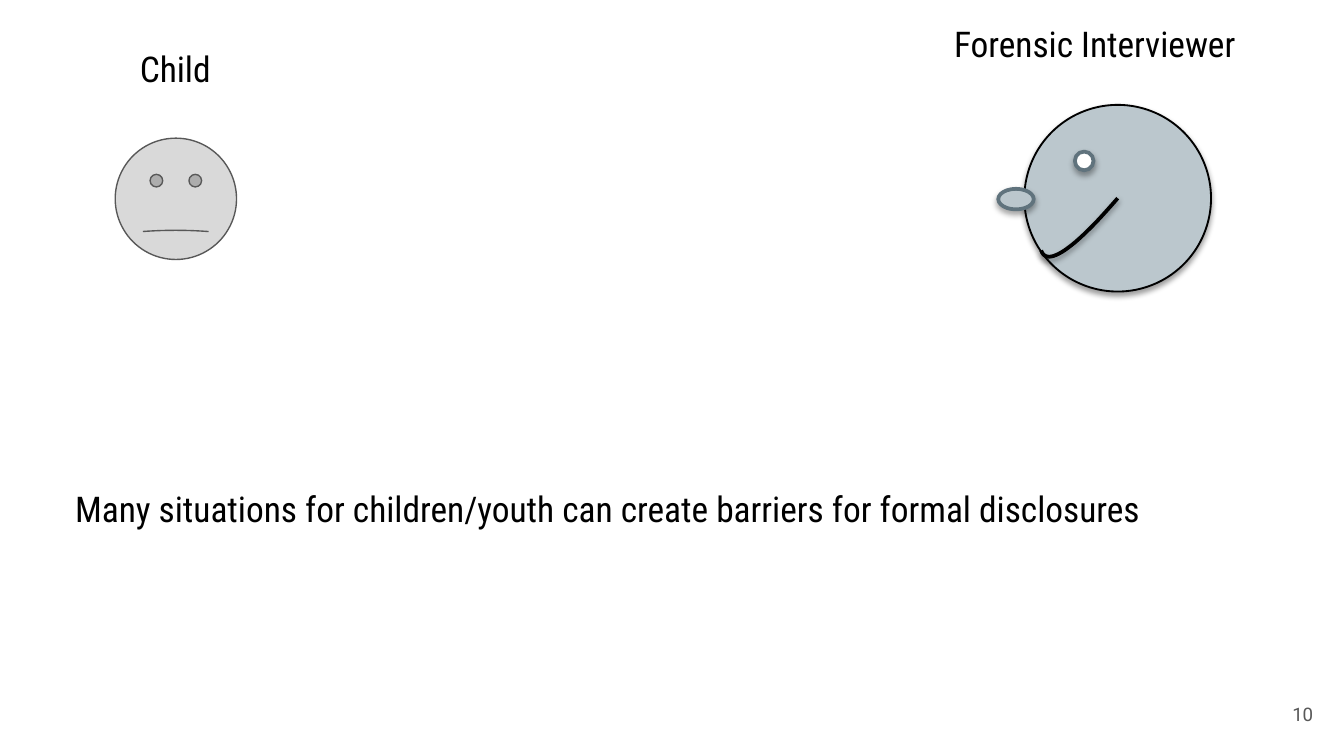
from pptx import Presentation, util as u
from pptx.dml.color import RGBColor
from pptx.enum import shapes, text
from pptx.oxml import ns
from lxml import etree

Pt = u.Pt
SHAPE = shapes.MSO_SHAPE
LEFT, RIGHT = text.PP_ALIGN.LEFT, text.PP_ALIGN.RIGHT


def color(value):
    return RGBColor.from_string(value)


def style(sp, fill, line, width):
    sp.shadow.inherit = False
    if fill:
        sp.fill.solid()
        sp.fill.fore_color.rgb = color(fill)
    else:
        sp.fill.background()
    sp.line.color.rgb = color(line)
    sp.line.width = Pt(width)


def add_shadow(sp, alpha, distance):
    effects = sp._element.spPr.find(ns.qn("a:effectLst"))
    outer = etree.SubElement(
        effects, ns.qn("a:outerShdw"), blurRad=str(Pt(3)), dist=str(Pt(distance)),
        dir="5400000", algn="bl", rotWithShape="0")
    black = etree.SubElement(outer, ns.qn("a:srgbClr"), val="000000")
    etree.SubElement(black, ns.qn("a:alpha"), val=str(alpha * 1000))


def add_shape(s, kind, box, fill, line, width):
    sp = s.shapes.add_shape(kind, *map(Pt, box))
    style(sp, fill, line, width)
    return sp


def add_text(s, box, words, size=19, font="Roboto Condensed", ink="000000",
             indent=0, align=LEFT, anchor=text.MSO_ANCHOR.TOP, wrap=True):
    tf = s.shapes.add_textbox(*map(Pt, box)).text_frame
    tf.word_wrap = wrap
    tf.vertical_anchor = anchor
    tf.margin_left = tf.margin_right = tf.margin_top = tf.margin_bottom = Pt(7.2)
    p = tf.paragraphs[0]
    p.alignment = align
    if indent:
        p._p.get_or_add_pPr().set("marL", str(Pt(indent)))
    r = p.add_run()
    r.text = words
    r.font.size = Pt(size)
    r.font.name = font
    r.font.color.rgb = color(ink)


def child_face(s, box):
    face = add_shape(s, SHAPE.SMILEY_FACE, box, "D9D9D9", "585858", 0.75)
    face.adjustments[0] = -0.005  # almost flat mouth


def curve_points(start, c1, c2, end, steps=24):
    for i in range(steps + 1):
        t = i / steps
        k = ((1 - t) ** 3, 3 * t * (1 - t) ** 2, 3 * t * t * (1 - t), t ** 3)
        yield tuple(sum(w * q[axis] for w, q in zip(k, (start, c1, c2, end)))
                    for axis in (0, 1))


def interviewer_head(s, box):
    x, y, w, h = box

    def part(px, py, pw, ph):
        return x + px * w, y + py * h, pw * w, ph * h

    # Head and eye
    head = add_shape(s, SHAPE.OVAL, box, "BBC7CD", "000000", 1)
    add_shadow(head, 38, 1.6)
    eye = add_shape(s, SHAPE.OVAL, part(0.27, 0.25, 0.1, 0.1), "FFFFFF", "60737D", 2)
    add_shadow(eye, 35, 1.8)

    # Mouth, from the centre of the head to its edge
    controls = [(0.5, 0.5), (0.26, 0.78), (0.12, 0.87), (0.09, 0.78)]
    points = [(Pt(x + px * w), Pt(y + py * h)) for px, py in curve_points(*controls)]
    builder = s.shapes.build_freeform(*points[0])
    builder.add_line_segments(points[1:], close=False)
    mouth = builder.convert_to_shape()
    style(mouth, None, "000000", 2)
    add_shadow(mouth, 38, 1.6)

    # Nose
    nose = add_shape(s, SHAPE.OVAL, part(-0.14, 0.45, 0.19, 0.11), "BBC7CD", "60737D", 2)
    add_shadow(nose, 35, 1.8)


def main():
    prs = Presentation()
    prs.slide_width, prs.slide_height = Pt(720), Pt(405)
    s = prs.slides.add_slide(prs.slide_layouts[6])

    # Interviewer label
    add_text(s, (360, 4.6, 353.5, 37.4), "Forensic Interviewer", indent=144)

    # Child
    child_face(s, (61.7, 74, 65, 65))
    add_text(s, (24.5, 18, 495, 37.4), "Child", indent=43.3)

    # Statement and slide number
    add_text(s, (33.2, 253.5, 702, 37.4),
             "Many situations for children/youth can create barriers for formal disclosures")
    add_text(s, (684, 370, 26.6, 25.2), "10", 10, "Roboto", "585858",
             align=RIGHT, anchor=text.MSO_ANCHOR.MIDDLE, wrap=False)

    # Interviewer
    interviewer_head(s, (548.8, 56.2, 100, 100))

    prs.save("out.pptx")


if __name__ == "__main__":
    main()
